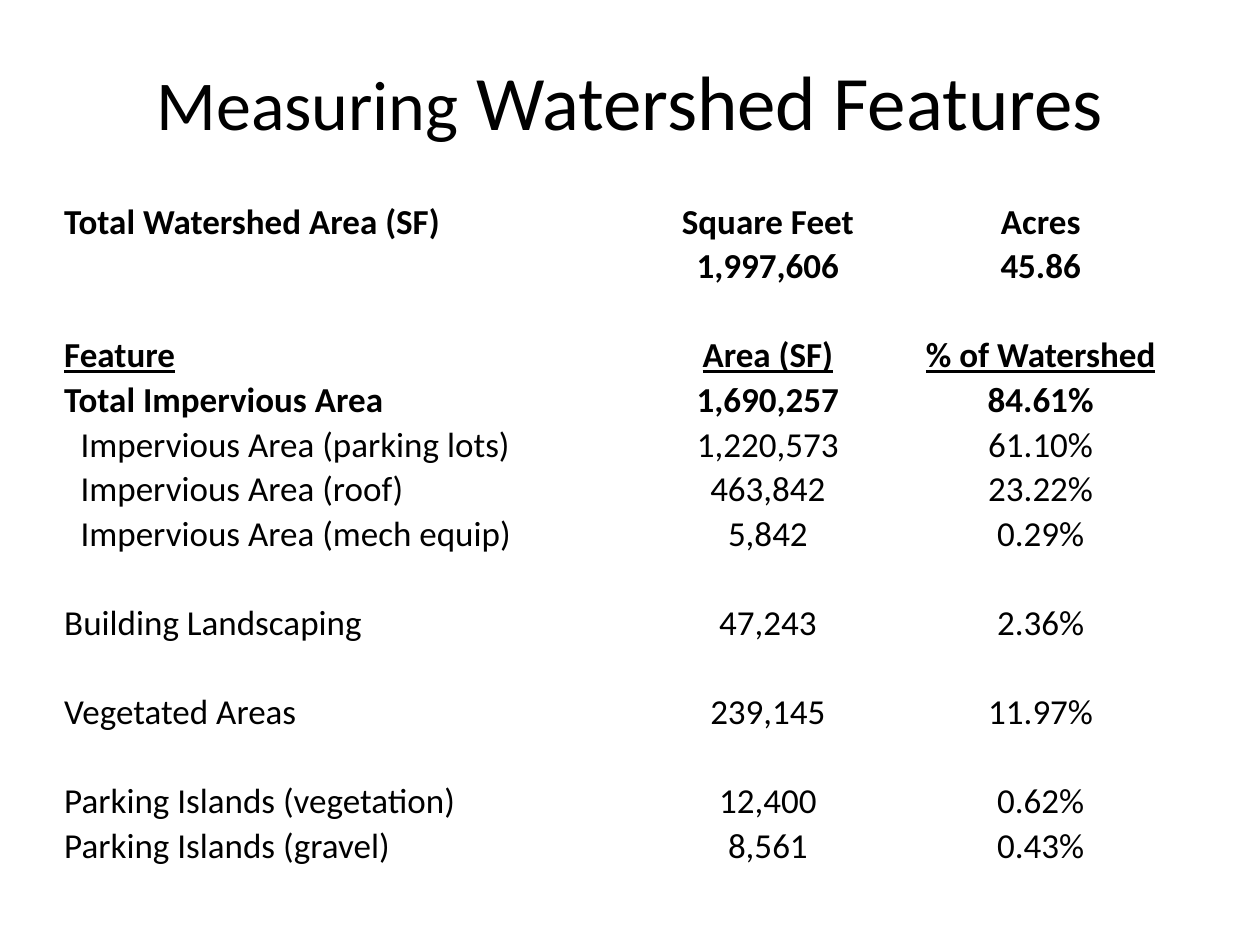
from pptx import Presentation
from pptx.dml.color import RGBColor
from pptx.enum import text
from pptx.util import Inches, Pt

FONT = "Calibri"
BLACK = "000000"
TITLE_ONLY = 5
COLUMN_WIDTHS = (4.67, 1.85, 2.48)
CELL_MARGIN = 0.01
INDENT = 0.13

# Each row: its cells, then its format; an empty tuple leaves a gap.
BOLD = {"bold": True}
HEADING = {"bold": True, "underline": True}
PLAIN = {}
PART = {"indent": INDENT}
GAP = ((), PLAIN)
ROWS = (
    (("Total Watershed Area (SF)", "Square Feet", "Acres"), BOLD),
    (("", "1,997,606", "45.86"), BOLD),
    GAP,
    (("Feature", "Area (SF)", "% of Watershed"), HEADING),
    (("Total Impervious Area", "1,690,257", "84.61%"), BOLD),
    (("Impervious Area (parking lots)", "1,220,573", "61.10%"), PART),
    (("Impervious Area (roof)", "463,842", "23.22%"), PART),
    (("Impervious Area (mech equip)", "5,842", "0.29%"), PART),
    GAP,
    (("Building Landscaping", "47,243", "2.36%"), PLAIN),
    GAP,
    (("Vegetated Areas", "239,145", "11.97%"), PLAIN),
    GAP,
    (("Parking Islands (vegetation)", "12,400", "0.62%"), PLAIN),
    (("Parking Islands (gravel)", "8,561", "0.43%"), PLAIN),
)


def color(hex_string):
    return RGBColor.from_string(hex_string)


def add_text(paragraph, words, size=20, bold=False, underline=False,
             align=text.PP_ALIGN.LEFT, fill=BLACK):
    paragraph.alignment = align
    run = paragraph.add_run()
    run.text = words
    font = run.font
    font.name, font.size = FONT, Pt(size)
    font.bold, font.underline = bold, underline
    font.color.rgb = color(fill)


def place_title(slide, left, top, width, height):
    title = slide.shapes.title
    title.left, title.top = Inches(left), Inches(top)
    title.width, title.height = Inches(width), Inches(height)
    title.text_frame.vertical_anchor = text.MSO_ANCHOR.MIDDLE
    paragraph = title.text_frame.paragraphs[0]
    for words, size in (("Measuring", 40), (" Watershed Features", 44)):
        add_text(paragraph, words, size=size, align=text.PP_ALIGN.CENTER)


def format_cell(cell, indent):
    cell.fill.background()
    cell.vertical_anchor = text.MSO_ANCHOR.BOTTOM
    cell.margin_left = Inches(CELL_MARGIN + indent)
    cell.margin_right = cell.margin_top = Inches(CELL_MARGIN)
    cell.margin_bottom = 0


def add_feature_table(slide, left, top, width, height):
    frame = slide.shapes.add_table(
        len(ROWS), len(COLUMN_WIDTHS),
        Inches(left), Inches(top), Inches(width), Inches(height))
    table = frame.table
    table.first_row = table.horz_banding = False
    for column, column_width in zip(table.columns, COLUMN_WIDTHS):
        column.width = Inches(column_width)
    for row, (values, row_format) in zip(table.rows, ROWS):
        font_format = dict(row_format)
        indent = font_format.pop("indent", 0)
        for index, cell in enumerate(row.cells):
            format_cell(cell, indent if index == 0 else 0)
            if index < len(values) and values[index]:
                align = text.PP_ALIGN.CENTER if index else text.PP_ALIGN.LEFT
                add_text(cell.text_frame.paragraphs[0], values[index],
                         align=align, **font_format)


def main():
    presentation = Presentation()
    presentation.slide_width = Inches(10)
    presentation.slide_height = Inches(7.5)
    slide = presentation.slides.add_slide(
        presentation.slide_layouts[TITLE_ONLY])
    place_title(slide, 0.5, 0.17, 9, 1.25)
    add_feature_table(slide, 0.5, 1.58, 9, 5.31)
    presentation.save("out.pptx")


if __name__ == "__main__":
    main()
